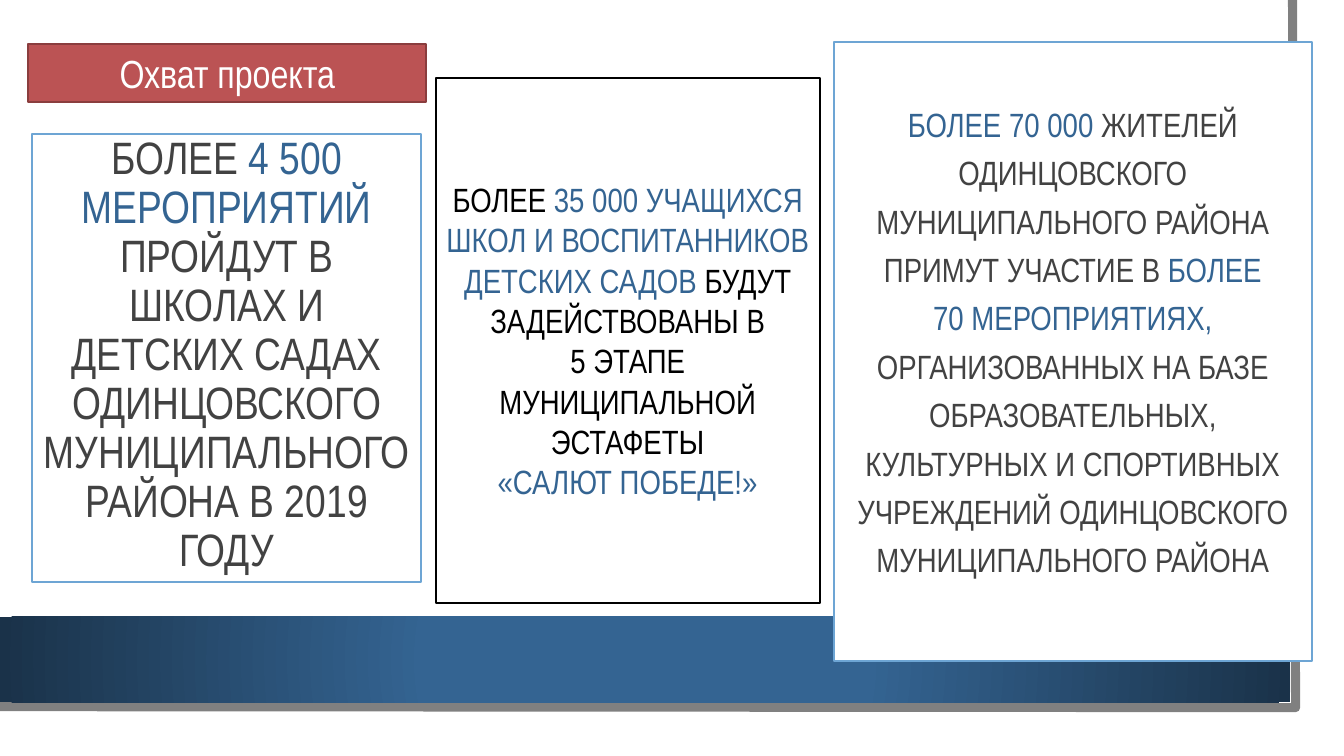
from lxml import etree
from pptx import Presentation
from pptx import util as u
from pptx.dml.color import RGBColor
from pptx.enum import shapes, text
from pptx.oxml import ns

WHITE = RGBColor(0xFF, 0xFF, 0xFF)
BLACK = RGBColor(0x00, 0x00, 0x00)
GREY = RGBColor(0x80, 0x80, 0x80)
DARK = RGBColor(0x42, 0x42, 0x42)
BLUE = RGBColor(0x34, 0x64, 0x92)
NAVY = RGBColor(0x1A, 0x32, 0x49)
SKY = RGBColor(0x6D, 0xA5, 0xD4)
RED = RGBColor(0xBB, 0x53, 0x54)
MAROON = RGBColor(0x8A, 0x3D, 0x3E)

presentation = Presentation()
presentation.slide_width = u.Inches(13.33)
presentation.slide_height = u.Inches(7.5)
slide = presentation.slides.add_slide(presentation.slide_layouts[5])


def share(*percents):
    """Turn percentages of the slide's width and height, in turn, into lengths."""
    sides = (presentation.slide_width, presentation.slide_height)
    return [u.Emu(round(sides[i % 2] * percent / 100)) for i, percent in enumerate(percents)]


# Grey edge along the right and the bottom
corner = [share(96.17, 0), share(96.4, 93.6), share(0, 93.47)]
builder = slide.shapes.build_freeform(*corner[0])
builder.add_line_segments(corner[1:], close=False)
edge = builder.convert_to_shape()
edge.shadow.inherit = False
edge.fill.background()
edge.line.color.rgb = GREY
edge.line.width = u.Pt(6.5)

# Blue band with a round gradient
band = slide.shapes.add_shape(shapes.MSO_SHAPE.RECTANGLE, *share(0, 81.6, 96.02, 11.33))
band.shadow.inherit = False
band.line.fill.background()
band.fill.gradient()
gradient = band.fill._xPr.find(ns.qn("a:gradFill"))
for child in list(gradient):
    gradient.remove(child)
stops = etree.SubElement(gradient, ns.qn("a:gsLst"))
for position, color in ((34, BLUE), (100, NAVY)):
    stop = etree.SubElement(stops, ns.qn("a:gs"), pos=str(position * 1000))
    etree.SubElement(stop, ns.qn("a:srgbClr"), val=str(color))
circle = etree.SubElement(gradient, ns.qn("a:path"), path="circle")
etree.SubElement(circle, ns.qn("a:fillToRect"), l="50000", t="50000", r="50000", b="50000")

# Framed texts: each paragraph is a list of (words, colour)
events = [[
    ("БОЛЕЕ ", DARK),
    ("4 500 МЕРОПРИЯТИЙ ", BLUE),
    ("ПРОЙДУТ В ШКОЛАХ И ДЕТСКИХ САДАХ ОДИНЦОВСКОГО МУНИЦИПАЛЬНОГО РАЙОНА В 2019 ГОДУ", DARK),
]]
pupils = [
    [("БОЛЕЕ ", BLACK),
     ("35 000 УЧАЩИХСЯ ШКОЛ И ВОСПИТАННИКОВ ДЕТСКИХ САДОВ ", BLUE),
     ("БУДУТ ЗАДЕЙСТВОВАНЫ В", BLACK)],
    [("5 ЭТАПЕ", BLACK)],
    [("МУНИЦИПАЛЬНОЙ ЭСТАФЕТЫ", BLACK)],
    [("«САЛЮТ ПОБЕДЕ!»", BLUE)],
]
residents = [
    [("БОЛЕЕ 70 000 ", BLUE),
     ("ЖИТЕЛЕЙ ОДИНЦОВСКОГО МУНИЦИПАЛЬНОГО РАЙОНА ПРИМУТ УЧАСТИЕ В ", DARK),
     ("БОЛЕЕ", BLUE)],
    [("70 МЕРОПРИЯТИЯХ, ", BLUE),
     ("ОРГАНИЗОВАННЫХ НА БАЗЕ ОБРАЗОВАТЕЛЬНЫХ, КУЛЬТУРНЫХ И СПОРТИВНЫХ "
      "УЧРЕЖДЕНИЙ ОДИНЦОВСКОГО МУНИЦИПАЛЬНОГО РАЙОНА", DARK)],
]
label = [[("Охват проекта", WHITE)]]

TOP, MIDDLE, BOTTOM = (text.MSO_ANCHOR.TOP, text.MSO_ANCHOR.MIDDLE, text.MSO_ANCHOR.BOTTOM)
# place, fill, line, size, line spacing, anchor, top margin, paragraphs
frames = [
    ((2.4, 17.73, 28.96, 59.2), WHITE, SKY, 32.4, 0.9, BOTTOM, 0.05, events),
    ((32.41, 10.27, 28.58, 69.47), WHITE, BLACK, 24, 1.0, MIDDLE, 0.05, pupils),
    ((62.04, 5.6, 35.56, 81.87), WHITE, SKY, 24, 1.2, TOP, 0.53, residents),
    ((2.1, 5.87, 29.63, 7.6), RED, MAROON, 28, 1.0, MIDDLE, 0.05, label),
]
for place, fill, line, size, spacing, anchor, margin, paragraphs in frames:
    left, top, width, height = share(*place)
    if paragraphs is events:
        shape = slide.shapes.title
    else:
        shape = slide.shapes.add_shape(shapes.MSO_SHAPE.RECTANGLE, left, top, width, height)
        shape.shadow.inherit = False
    for name, value in dict(left=left, top=top, width=width, height=height).items():
        setattr(shape, name, value)
    shape.fill.solid()
    shape.fill.fore_color.rgb = fill
    shape.line.color.rgb = line
    shape.line.width = u.Pt(1.5)

    frame = shape.text_frame
    frame_format = dict(word_wrap=True, auto_size=text.MSO_AUTO_SIZE.NONE,
                        vertical_anchor=anchor, margin_top=u.Inches(margin))
    for name, value in frame_format.items():
        setattr(frame, name, value)
    for index, parts in enumerate(paragraphs):
        paragraph = frame.add_paragraph() if index else frame.paragraphs[0]
        paragraph.alignment = text.PP_ALIGN.CENTER
        paragraph.line_spacing = spacing
        for words, color in parts:
            run = paragraph.add_run()
            run.text = words
            for name, value in dict(name="Arial Narrow", size=u.Pt(size)).items():
                setattr(run.font, name, value)
            run.font.color.rgb = color

presentation.save("out.pptx")
